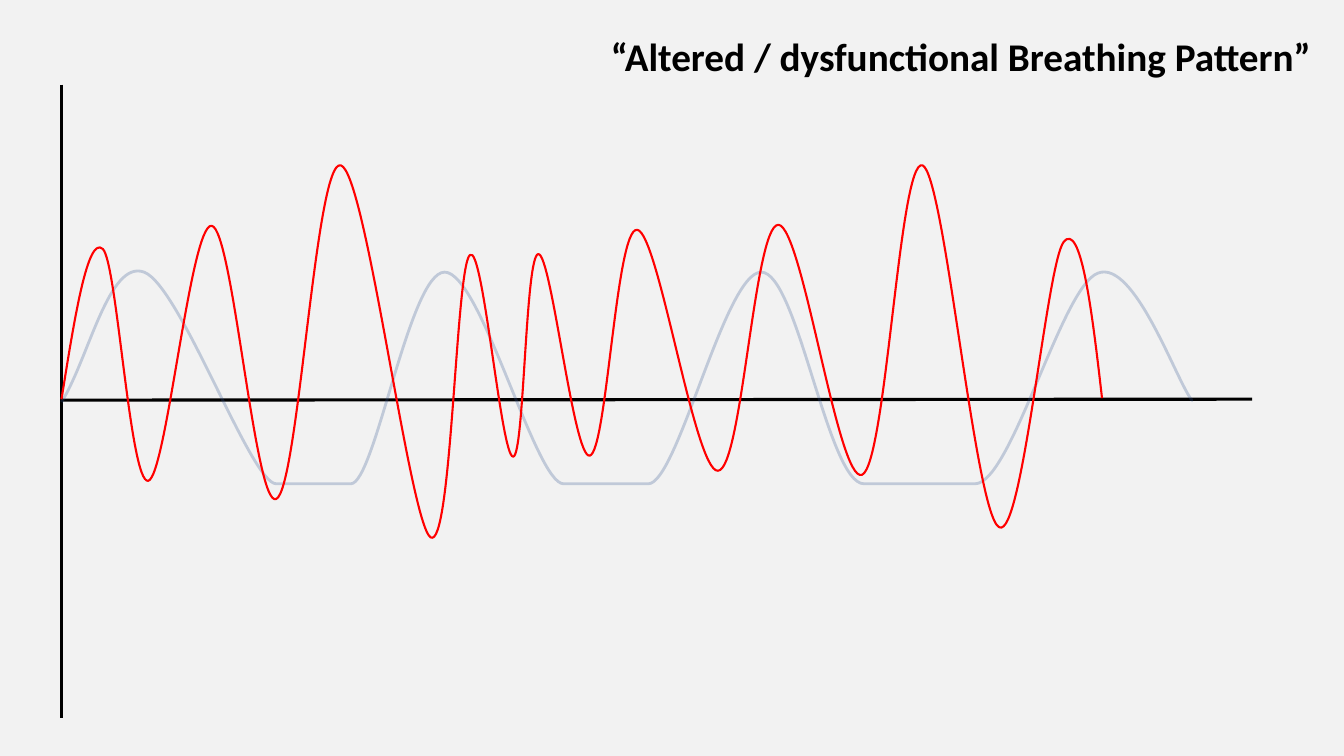
from lxml.etree import SubElement
from pptx import Presentation
from pptx.dml.color import RGBColor
from pptx.enum.shapes import MSO_CONNECTOR
from pptx.enum.text import MSO_ANCHOR, PP_ALIGN
from pptx.oxml.ns import qn
from pptx.util import Pt

PX = 9144
BACKGROUND = RGBColor(0xF2, 0xF2, 0xF2)
BLACK = RGBColor(0x00, 0x00, 0x00)
BLUE = RGBColor(0x32, 0x54, 0x91)
RED = RGBColor(0xFF, 0x00, 0x00)

AXES = [(61, 84, 61, 712), (60, 397, 1242, 396)]

NORMAL_BREATHING = [
    (61, 399),
    (88, 356, 108, 257, 143, 270), (179, 284, 249, 480, 274, 480),
    (348, 480),
    (372, 480, 406, 270, 441, 270), (477, 270, 531, 480, 559, 480),
    (643, 480),
    (672, 480, 719, 270, 755, 270), (791, 270, 821, 480, 857, 480),
    (967, 480),
    (1003, 480, 1053, 284, 1089, 271), (1125, 257, 1166, 376, 1182, 397),
    (1183, 397),
]
ALTERED_BREATHING = [
    (61, 396),
    (74, 315, 87, 233, 102, 247), (116, 260, 129, 480, 147, 477),
    (165, 473, 189, 221, 210, 224), (231, 227, 253, 505, 274, 495),
    (296, 485, 313, 157, 338, 164), (363, 170, 406, 518, 427, 533),
    (448, 547, 452, 266, 466, 253), (479, 240, 497, 454, 509, 453),
    (520, 453, 521, 252, 534, 252), (547, 252, 569, 456, 585, 452),
    (602, 448, 611, 225, 632, 228), (653, 230, 689, 468, 712, 467),
    (736, 467, 748, 223, 772, 223), (796, 224, 831, 480, 855, 471),
    (879, 461, 892, 156, 915, 164), (937, 173, 967, 511, 991, 523),
    (1014, 536, 1038, 262, 1055, 240), (1072, 219, 1083, 307, 1093, 395),
]

prs = Presentation()
prs.slide_width = 1333 * PX
prs.slide_height = 750 * PX
s = prs.slides.add_slide(prs.slide_layouts[5])
s.background.fill.solid()
s.background.fill.fore_color.rgb = BACKGROUND

title = s.shapes.title
title.left, title.top, title.width, title.height = (v * PX for v in (596, 27, 730, 57))
tf = title.text_frame
tf.text = "“Altered / dysfunctional Breathing Pattern”"
tf.word_wrap = True
tf.vertical_anchor = MSO_ANCHOR.TOP
p = tf.paragraphs[0]
p.alignment = PP_ALIGN.LEFT
p.font.name = "Calibri"
p.font.size = Pt(28)
p.font.bold = True
p.font.color.rgb = BLACK

for ends in AXES:
    axis = s.shapes.add_connector(MSO_CONNECTOR.STRAIGHT, *(v * PX for v in ends))
    axis.line.color.rgb = BLACK
    axis.line.width = Pt(2.25)
    SubElement(axis._element.spPr, qn("a:effectLst"))

for segments, color, width, opacity in [
    (NORMAL_BREATHING, BLUE, 2, 25),
    (ALTERED_BREATHING, RED, 1.5, 100),
]:
    anchors = [seg[-2:] for seg in segments]
    builder = s.shapes.build_freeform(*anchors[0], scale=PX)
    builder.add_line_segments(anchors[1:], close=False)
    wave = builder.convert_to_shape()
    left, top = (min(axis_values) for axis_values in zip(*anchors))
    steps = wave._element.findall(".//" + qn("a:lnTo"))
    for step, seg in zip(steps, segments[1:]):
        if len(seg) == 6:
            step.tag = qn("a:cubicBezTo")
            step.clear()
            for x, y in zip(seg[::2], seg[1::2]):
                SubElement(step, qn("a:pt"), x=str(x - left), y=str(y - top))
    wave.shadow.inherit = False
    wave.fill.background()
    wave.line.color.rgb = color
    wave.line.width = Pt(width)
    if opacity < 100:
        clr = wave.line._ln.find(".//" + qn("a:srgbClr"))
        SubElement(clr, qn("a:alpha"), val=str(opacity * 1000))

prs.save("out.pptx")
